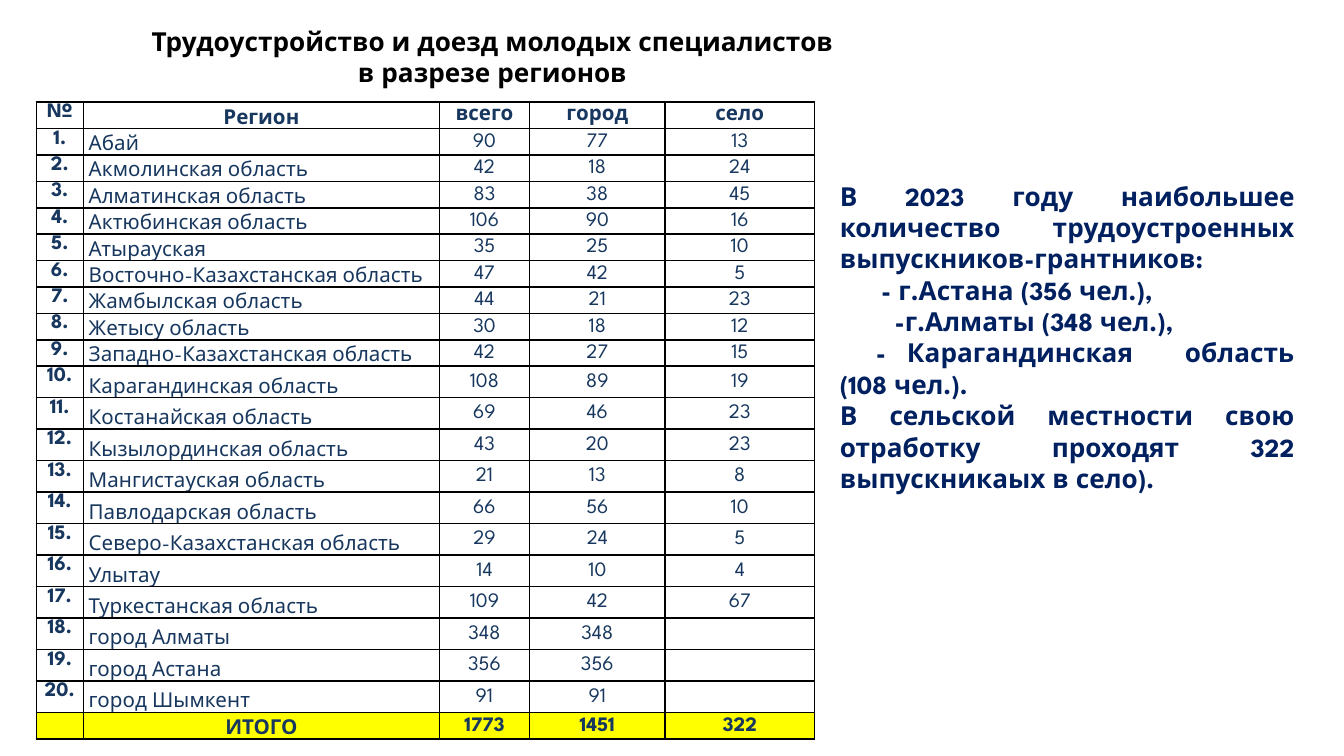
"""Build a slide on graduate employment by region."""
import dataclasses
import typing

import lxml.etree
import pptx
import pptx.dml.color
import pptx.enum.text
import pptx.oxml
import pptx.oxml.ns
import pptx.util

Inches = pptx.util.Inches
Align = pptx.enum.text.PP_ALIGN
Anchor = pptx.enum.text.MSO_ANCHOR


@dataclasses.dataclass(frozen=True)
class Theme:
    font: str = "League Spartan"
    black: str = "000000"
    white: str = "FFFFFF"
    yellow: str = "FFFF00"
    table_text: str = "17375E"
    note_text: str = "002060"
    heading_size: int = 14
    table_size: int = 11


class Region(typing.NamedTuple):
    name: str
    total: int
    city: int
    village: int | None = None


class Note(typing.NamedTuple):
    text: str
    indent: float = 0
    tab: float | None = None


class Column(typing.NamedTuple):
    title: str
    width: float
    anchor: Anchor


THEME = Theme()
COLUMNS = [
    Column("№", 0.35, Anchor.TOP),
    Column("Регион", 2.65, Anchor.BOTTOM),
    Column("всего", 0.67, Anchor.MIDDLE),
    Column("город", 1.01, Anchor.MIDDLE),
    Column("село", 1.11, Anchor.MIDDLE),
]
REGIONS = [
    Region("Абай", 90, 77, 13),
    Region("Акмолинская область", 42, 18, 24),
    Region("Алматинская область", 83, 38, 45),
    Region("Актюбинская область", 106, 90, 16),
    Region("Атырауская", 35, 25, 10),
    Region("Восточно-Казахстанская область", 47, 42, 5),
    Region("Жамбылская область", 44, 21, 23),
    Region("Жетысу область", 30, 18, 12),
    Region("Западно-Казахстанская область", 42, 27, 15),
    Region("Карагандинская область", 108, 89, 19),
    Region("Костанайская область", 69, 46, 23),
    Region("Кызылординская область", 43, 20, 23),
    Region("Мангистауская область", 21, 13, 8),
    Region("Павлодарская область", 66, 56, 10),
    Region("Северо-Казахстанская область", 29, 24, 5),
    Region("Улытау", 14, 10, 4),
    Region("Туркестанская область", 109, 42, 67),
    Region("город Алматы", 348, 348),
    Region("город Астана", 356, 356),
    Region("город Шымкент", 91, 91),
]
TOTAL = Region("ИТОГО", 1773, 1451, 322)
HEADING = [
    Note("Трудоустройство и доезд молодых специалистов "),
    Note("в разрезе регионов "),
]
NOTES = [
    Note("В 2023 году наибольшее количество трудоустроенных выпускников-грантников:"),
    Note("- г.Астана (356 чел.),", 0.31),
    Note("-г.Алматы (348 чел.),", 0.41),
    Note("-\tКарагандинская область (108 чел.).", 0.27, 1.07),
    Note("В сельской местности свою отработку проходят 322 выпускникаых в село)."),
]


def write(para, text: str, *, size: int, color: str, bold: bool, align: Align) -> None:
    """Add one formatted span to a paragraph, or size the empty paragraph."""
    para.alignment = align
    if not text:
        ending = pptx.oxml.parse_xml(
            f'<a:endParaRPr {pptx.oxml.ns.nsdecls("a")} sz="{size * 100}"/>')
        para._p.append(ending)
        return
    span = para.add_run()
    span.text = text
    span.font.name = THEME.font
    span.font.size = pptx.util.Pt(size)
    span.font.bold = bold
    span.font.color.rgb = pptx.dml.color.RGBColor.from_string(color)


def add_text(slide, notes: list[Note], left: float, top: float, width: float,
             height: float, *, color: str, align: Align) -> None:
    """Add a wrapped text box with one paragraph per note."""
    box = slide.shapes.add_textbox(Inches(left), Inches(top), Inches(width), Inches(height))
    frame = box.text_frame
    frame.word_wrap = True
    for index, note in enumerate(notes):
        para = frame.add_paragraph() if index else frame.paragraphs[0]
        properties = para._p.get_or_add_pPr()
        if note.indent:
            properties.set("marL", "0")
            properties.set("indent", str(Inches(note.indent)))
        if note.tab:
            tabs = lxml.etree.SubElement(properties, pptx.oxml.ns.qn("a:tabLst"))
            lxml.etree.SubElement(tabs, pptx.oxml.ns.qn("a:tab"),
                                  pos=str(Inches(note.tab)), algn="l")
        write(para, note.text, size=THEME.heading_size, color=color, bold=True, align=align)


def add_borders(cell) -> None:
    """Draw a thin black line on each side of a cell."""
    properties = cell._tc.get_or_add_tcPr()
    for side in ("lnL", "lnR", "lnT", "lnB"):
        properties.append(pptx.oxml.parse_xml(
            f'<a:{side} {pptx.oxml.ns.nsdecls("a")} w="{pptx.util.Pt(1)}"><a:solidFill>'
            f'<a:srgbClr val="{THEME.black}"/></a:solidFill></a:{side}>'))


def fill_cell(cell, text: str, *, anchor: Anchor, fill: str, bold: bool, align: Align) -> None:
    """Format one table cell and write its text."""
    cell.margin_left = cell.margin_right = Inches(0.04)
    cell.margin_top = cell.margin_bottom = 0
    cell.vertical_anchor = anchor
    add_borders(cell)
    cell.fill.solid()
    cell.fill.fore_color.rgb = pptx.dml.color.RGBColor.from_string(fill)
    para = cell.text_frame.paragraphs[0]
    para.line_spacing = 1.07
    para.space_after = pptx.util.Pt(8)
    write(para, text, size=THEME.table_size, color=THEME.table_text, bold=bold, align=align)


def add_region_table(slide) -> None:
    """Add the table of regions with its header and total rows."""
    rows = [[column.title for column in COLUMNS]]
    rows += [[f"{number}.", *region] for number, region in enumerate(REGIONS, 1)]
    rows.append(["", *TOTAL])
    last = len(rows) - 1
    low_row, tall_row = Inches(0.13), Inches(2.58) // 11
    table = slide.shapes.add_table(len(rows), len(COLUMNS), Inches(0.27), Inches(0.76),
                                   Inches(5.79), Inches(4.57)).table
    table.first_row = table.horz_banding = False
    for index, column in enumerate(COLUMNS):
        table.columns[index].width = Inches(column.width)
    for row, values in enumerate(rows):
        table.rows[row].height = tall_row if 10 <= row < last else low_row
        outer = row in (0, last)
        for index, value in enumerate(values):
            fill_cell(table.cell(row, index), "" if value is None else str(value),
                      anchor=COLUMNS[index].anchor,
                      fill=THEME.yellow if row == last else THEME.white,
                      bold=outer or index == 0,
                      align=Align.LEFT if index == 1 and not outer else Align.CENTER)


def main() -> None:
    """Create and save the deck."""
    deck = pptx.Presentation()
    deck.slide_width = Inches(10)
    deck.slide_height = deck.slide_width * 9 // 16
    page = deck.slides.add_slide(deck.slide_layouts[6])
    add_text(page, HEADING, 0.5, 0.14, 6.38, 0.57, color=THEME.black, align=Align.CENTER)
    add_region_table(page)
    add_text(page, NOTES, 6.15, 1.29, 3.58, 2.46, color=THEME.note_text, align=Align.JUSTIFY)
    deck.save("out.pptx")


if __name__ == "__main__":
    main()
